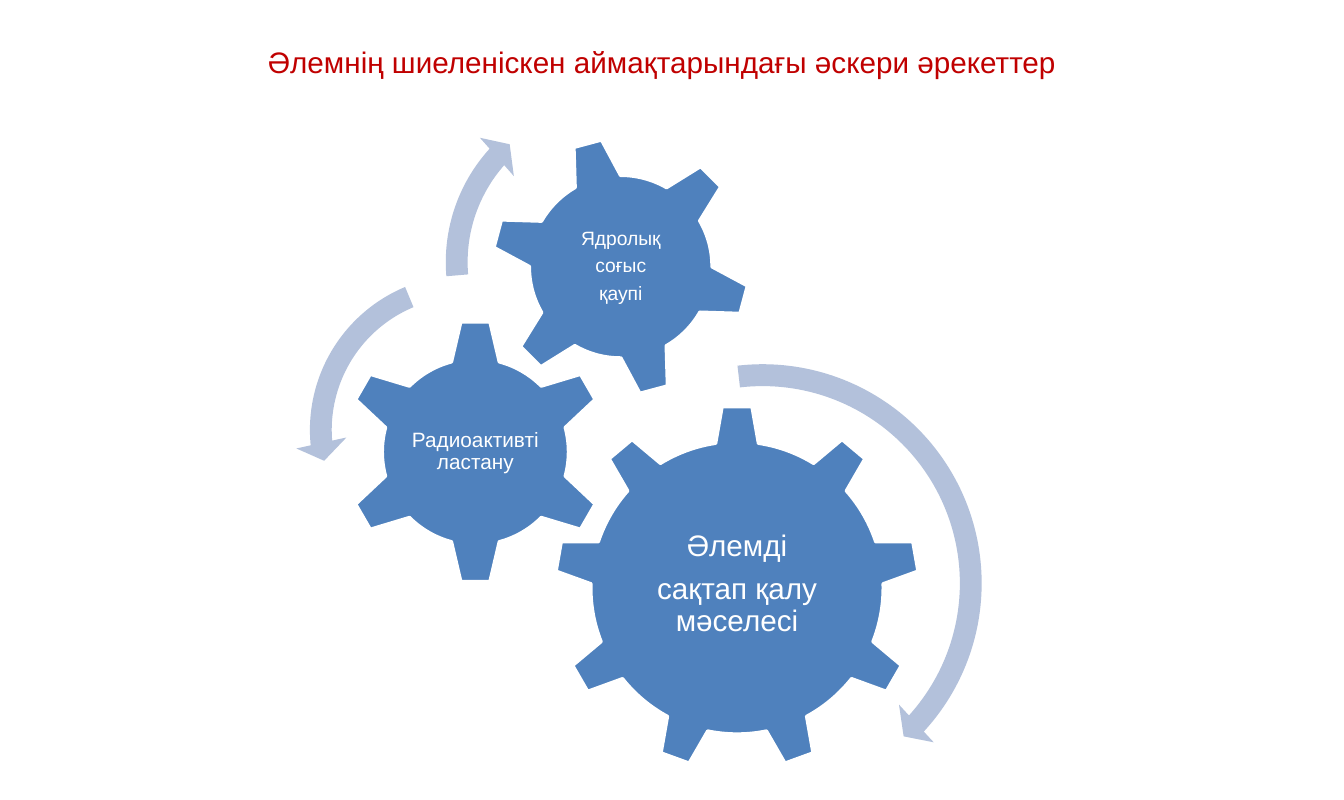
from dataclasses import dataclass

from pptx import Presentation
from pptx.dml.color import RGBColor
from pptx.enum.shapes import MSO_SHAPE as Preset
from pptx.enum.text import MSO_ANCHOR as Anchor, PP_ALIGN as Align
from pptx.shapes.autoshape import Shape
from pptx.slide import Slide
from pptx.util import Cm, Pt

FONT = "Arial"
RED = "C00000"
WHITE = "FFFFFF"
GEAR_BLUE = "4F81BD"
ARROW_BLUE = "B3C1DB"
ARROW_THICKNESS = 0.52
ARROW_HEAD = 0.61


@dataclass(frozen=True)
class Gear:
    preset: Preset
    center_x: float
    center_y: float
    size: float
    rotation: float
    label_width: float
    label_height: float
    label_rise: float
    inset: float
    font_size: int
    lines: tuple[str, ...]


@dataclass(frozen=True)
class Arrow:
    preset: Preset
    center_x: float
    center_y: float
    size: float
    head_angle: float
    end_angle: float
    start_angle: float


GEARS = (
    Gear(Preset.GEAR_9, 17.55, 14, 8.69, 0, 5.21, 4.47, 0.08, 0.08, 20,
         ("Әлемді", "сақтап қалу мәселесі")),
    Gear(Preset.GEAR_6, 11.32, 10.76, 6.32, 0, 3.15, 3.12, 0, 0.05, 14,
         ("Радиоактивті ластану",)),
    Gear(Preset.GEAR_6, 14.78, 6.35, 6.2, 345, 3.48, 3.48, 0, 0.05, 13,
         ("Ядролық", "соғыс", "қаупі")),
)

ARROWS = (
    Arrow(Preset.CIRCULAR_ARROW, 18.16, 13.89, 11.13, 2.99, 25.43, 158.04),
    Arrow(Preset.LEFT_CIRCULAR_ARROW, 11.07, 10.24, 8.08, 4.3, 104.89, 148.38),
    Arrow(Preset.CIRCULAR_ARROW, 14.62, 6.24, 8.71, 3.94, 133.14, 105.08),
)


def color(value: str) -> RGBColor:
    return RGBColor.from_string(value)


def add_text(page: Slide, left: float, top: float, width: float, height: float,
             lines: tuple[str, ...], size: int, ink: str) -> Shape:
    box = page.shapes.add_textbox(Cm(left), Cm(top), Cm(width), Cm(height))
    frame = box.text_frame
    frame.word_wrap = True
    frame.text = "\n".join(lines)
    for para in frame.paragraphs:
        para.alignment = Align.CENTER
        para.font.name = FONT
        para.font.size = Pt(size)
        para.font.color.rgb = color(ink)
    return box


def add_centered(page: Slide, item: Gear | Arrow, fill: str) -> Shape:
    shape = page.shapes.add_shape(
        item.preset, Cm(item.center_x - item.size / 2),
        Cm(item.center_y - item.size / 2), Cm(item.size), Cm(item.size))
    shape.shadow.inherit = False
    shape.fill.solid()
    shape.fill.fore_color.rgb = color(fill)
    return shape


def add_gear(page: Slide, gear: Gear) -> None:
    shape = add_centered(page, gear, GEAR_BLUE)
    shape.rotation = gear.rotation
    shape.line.color.rgb = color(WHITE)
    shape.line.width = Pt(2)
    label = add_text(
        page, gear.center_x - gear.label_width / 2,
        gear.center_y - gear.label_height / 2 - gear.label_rise,
        gear.label_width, gear.label_height, gear.lines, gear.font_size, WHITE)
    frame = label.text_frame
    frame.vertical_anchor = Anchor.MIDDLE
    frame.margin_left = frame.margin_right = Cm(gear.inset)
    frame.margin_top = frame.margin_bottom = Cm(gear.inset)
    for para in frame.paragraphs:
        para.line_spacing = 0.9
        para.space_after = Pt(0.35 * gear.font_size)


def add_arrow(page: Slide, arrow: Arrow) -> None:
    shape = add_centered(page, arrow, ARROW_BLUE)
    shape.line.fill.background()
    values = (ARROW_THICKNESS / arrow.size, arrow.head_angle, arrow.end_angle,
              arrow.start_angle, ARROW_HEAD / arrow.size)
    for index, value in enumerate(values):
        shape.adjustments[index] = value


def main() -> None:
    deck = Presentation()
    deck.slide_width = Cm(32)
    deck.slide_height = Cm(19.05)
    page = deck.slides.add_slide(deck.slide_layouts[6])
    add_text(page, 3, 0.91, 25.53, 1.12,
             ("Әлемнің шиеленіскен аймақтарындағы әскери әрекеттер",), 20, RED)
    for gear in GEARS:
        add_gear(page, gear)
    for arrow in ARROWS:
        add_arrow(page, arrow)
    deck.save("out.pptx")


if __name__ == "__main__":
    main()
